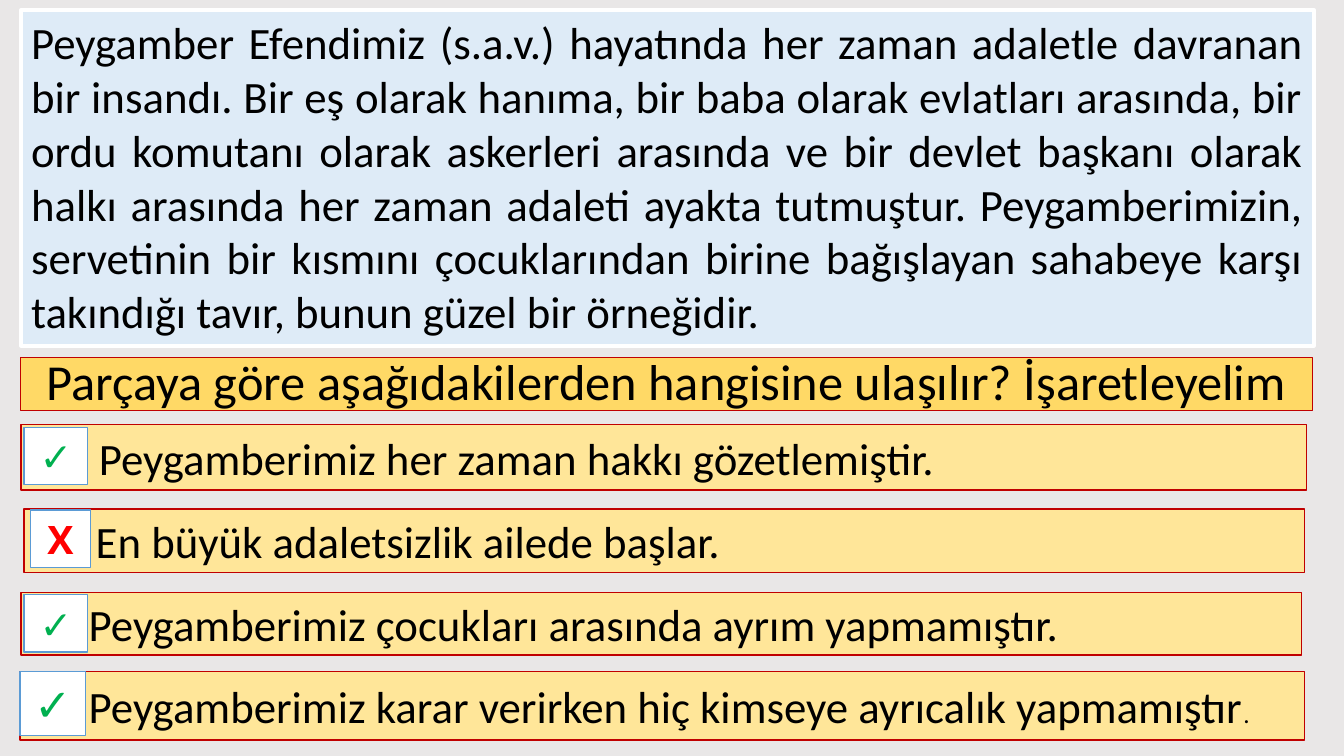
from dataclasses import dataclass

from pptx import Presentation
from pptx.dml.color import RGBColor
from pptx.enum.shapes import MSO_SHAPE
from pptx.enum.text import MSO_ANCHOR, PP_ALIGN
from pptx.util import Inches, Pt

COLORS = {
    "background": "E9E7E7", "passage": "DEEBF7", "white": "FFFFFF",
    "question": "FFD966", "option": "FFE699", "border": "C00000",
    "mark_border": "5B9BD5", "text": "000000", "right": "00B050", "wrong": "FF0000",
}

PASSAGE = (
    "Peygamber Efendimiz (s.a.v.) hayatında her zaman adaletle davranan bir insandı. "
    "Bir eş olarak hanıma, bir baba olarak evlatları arasında, bir ordu komutanı olarak "
    "askerleri arasında ve bir devlet başkanı olarak halkı arasında her zaman adaleti "
    "ayakta tutmuştur. Peygamberimizin, servetinin bir kısmını çocuklarından birine "
    "bağışlayan sahabeye karşı takındığı tavır, bunun güzel bir örneğidir."
)
QUESTION = "Parçaya göre aşağıdakilerden hangisine ulaşılır? İşaretleyelim"


@dataclass
class Box:
    left: float
    top: float
    width: float
    height: float


@dataclass
class Option:
    text: str
    bar: Box
    mark: Box
    text_left: float
    correct: bool = True
    mark_size: int = 28
    ending: str = ""


OPTIONS = [
    Option("Peygamberimiz her zaman hakkı gözetlemiştir.",
           Box(0.21, 4.21, 12.75, 0.65), Box(0.24, 4.24, 0.63, 0.57), 0.98),
    Option("En büyük adaletsizlik ailede başlar.",
           Box(0.24, 5.05, 12.7, 0.63), Box(0.3, 5.06, 0.6, 0.57), 0.95, correct=False),
    Option("Peygamberimiz çocukları arasında ayrım yapmamıştır.",
           Box(0.21, 5.88, 12.7, 0.62), Box(0.24, 5.9, 0.63, 0.57), 0.88),
    Option("Peygamberimiz karar verirken hiç kimseye ayrıcalık yapmamıştır",
           Box(0.2, 6.66, 12.74, 0.68), Box(0.2, 6.66, 0.65, 0.64), 0.88,
           mark_size=32, ending="."),
]


def rgb(name: str) -> RGBColor:
    return RGBColor.from_string(COLORS[name])


def add_box(s, box: Box, fill: str, line: str, line_width: float = 1):
    sp = s.shapes.add_shape(MSO_SHAPE.RECTANGLE, Inches(box.left), Inches(box.top),
                            Inches(box.width), Inches(box.height))
    sp.shadow.inherit = False
    sp.fill.solid()
    sp.fill.fore_color.rgb = rgb(fill)
    sp.line.color.rgb = rgb(line)
    sp.line.width = Pt(line_width)
    return sp


def add_text(sp, text: str, *, size: int = 32, font: str = "Calibri", color: str = "text",
             bold: bool = False, align: PP_ALIGN = PP_ALIGN.LEFT,
             anchor: MSO_ANCHOR = MSO_ANCHOR.MIDDLE, inset: float = 0.1,
             spacing: float = 1.0) -> None:
    """Append a formatted run to the first paragraph of the shape."""
    tf = sp.text_frame
    tf.word_wrap = True
    tf.vertical_anchor = anchor
    tf.margin_left = Inches(inset)
    p = tf.paragraphs[0]
    p.alignment = align
    p.line_spacing = spacing
    r = p.add_run()
    r.text = text
    r.font.size = Pt(size)
    r.font.name = font
    r.font.bold = bold
    r.font.color.rgb = rgb(color)


def add_option(s, option: Option) -> None:
    bar = add_box(s, option.bar, "option", "border")
    inset = option.text_left - option.bar.left
    add_text(bar, option.text, inset=inset)
    if option.ending:
        add_text(bar, option.ending, size=18, inset=inset)
    mark = add_box(s, option.mark, "white", "mark_border")
    add_text(mark, "✓" if option.correct else "X", size=option.mark_size,
             font="Open Sans", color="right" if option.correct else "wrong",
             bold=True, align=PP_ALIGN.CENTER)


def main() -> None:
    prs = Presentation()
    prs.slide_width, prs.slide_height = Inches(13.33), Inches(7.5)
    s = prs.slides.add_slide(prs.slide_layouts[6])
    s.background.fill.solid()
    s.background.fill.fore_color.rgb = rgb("background")

    passage = add_box(s, Box(0.21, 0.1, 12.82, 3.33), "passage", "white", 3)
    add_text(passage, PASSAGE, align=PP_ALIGN.JUSTIFY, anchor=MSO_ANCHOR.TOP)
    question = add_box(s, Box(0.2, 3.55, 12.82, 0.52), "question", "border", 0.75)
    add_text(question, QUESTION, size=36, align=PP_ALIGN.CENTER, spacing=0.9)
    for option in OPTIONS:
        add_option(s, option)

    prs.save("out.pptx")


if __name__ == "__main__":
    main()
